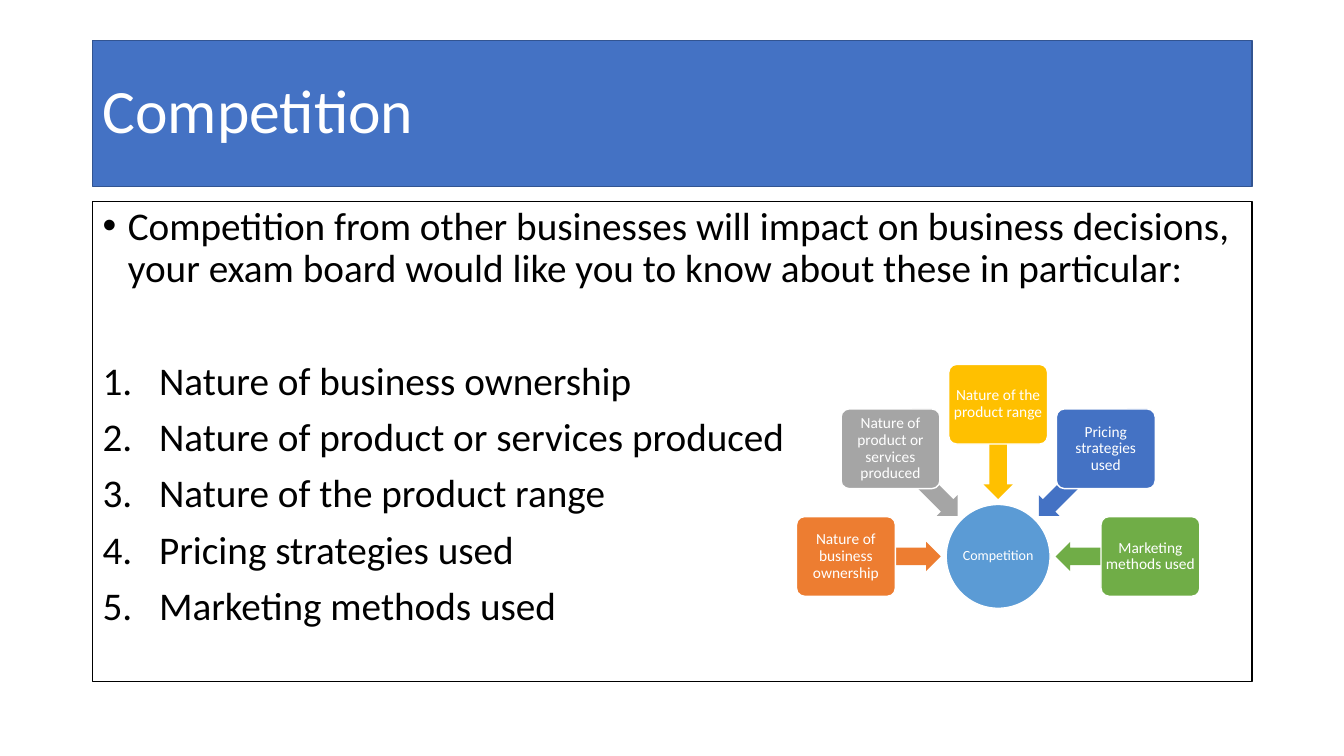
from dataclasses import dataclass
from math import cos, radians, sin

from lxml import etree
from pptx import Presentation
from pptx.dml.color import RGBColor
from pptx.enum.shapes import MSO_SHAPE
from pptx.enum.text import MSO_ANCHOR, PP_ALIGN
from pptx.oxml.ns import qn
from pptx.util import Pt

RECT, ROUND = MSO_SHAPE.RECTANGLE, MSO_SHAPE.ROUNDED_RECTANGLE
OVAL, ARROW = MSO_SHAPE.OVAL, MSO_SHAPE.LEFT_ARROW
TOP, MIDDLE = MSO_ANCHOR.TOP, MSO_ANCHOR.MIDDLE
LEFT, CENTER = PP_ALIGN.LEFT, PP_ALIGN.CENTER

# Content: each factor is a numbered line and a box around the hub
TITLE = "Competition"
INTRO = ("Competition from other businesses will impact on business decisions, "
         "your exam board would like you to know about these in particular:")
FACTORS = [
    ("Nature of business ownership", "ED7D31"),
    ("Nature of product or services produced", "A5A5A5"),
    ("Nature of the product range", "FFC000"),
    ("Pricing strategies used", "4472C4"),
    ("Marketing methods used", "70AD47"),
]


@dataclass(frozen=True)
class Theme:
    font: str = "Calibri"
    black: str = "000000"
    white: str = "FFFFFF"
    banner: str = "4472C4"
    banner_line: str = "325491"
    hub: str = "5B9BD5"
    title_pt: int = 44
    body_pt: int = 28
    hub_pt: int = 10
    box_pt: int = 11


THEME = Theme()

# Layout in px, 100 to the inch
PX = 9144
SLIDE_W, SLIDE_H = 1333, 750
MARGIN, CONTENT_W = 92, 1150
TITLE_Y, TITLE_H = 40, 145
BODY_Y, BODY_H = 200, 476
HUB_X, HUB_Y, HUB_D = 990, 552, 103
BOX_W, BOX_H, BOX_RADIUS = 98, 79, 151
ARROW_W, ARROW_H, ARROW_RADIUS = 94, 29, 104
FIRST_ANGLE, ANGLE_STEP = 180, 45


def px(n):
    return round(n * PX)


def add_shape(s, kind, x, y, w, h, fill, line=None):
    sp = s.shapes.add_shape(kind, px(x), px(y), px(w), px(h))
    sp.shadow.inherit = False
    sp.fill.solid()
    sp.fill.fore_color.rgb = RGBColor.from_string(fill)
    if line:
        sp.line.color.rgb = RGBColor.from_string(line)
        sp.line.width = Pt(1)
    else:
        sp.line.fill.background()
    return sp


def set_frame(sp, anchor, inset=None):
    tf = sp.text_frame
    tf.word_wrap = True
    tf.vertical_anchor = anchor
    if inset is not None:
        tf.margin_left = tf.margin_right = px(inset)
        tf.margin_top = tf.margin_bottom = px(inset)
    return tf


def write(p, text, size, color, align=LEFT, before=0):
    p.alignment = align
    p.line_spacing = 0.9
    p.space_before = Pt(before)
    r = p.add_run()
    r.text = text
    r.font.name = THEME.font
    r.font.size = Pt(size)
    r.font.color.rgb = RGBColor.from_string(color)


def add_bullet(p, indent, tag, **attrs):
    pPr = p._p.get_or_add_pPr()
    pPr.set("marL", str(px(indent)))
    pPr.set("indent", str(-px(indent)))
    etree.SubElement(pPr, qn("a:buFont"), typeface="Arial" if tag == "a:buChar" else THEME.font)
    etree.SubElement(pPr, qn(tag), **attrs)


def on_ring(angle, radius, w, h):
    """Top left corner of a w by h part centred on a ring around the hub."""
    a = radians(angle)
    return HUB_X + radius * cos(a) - w / 2, HUB_Y + radius * sin(a) - h / 2


prs = Presentation()
prs.slide_width, prs.slide_height = px(SLIDE_W), px(SLIDE_H)
s = prs.slides.add_slide(prs.slide_layouts[6])

# Title banner
banner = add_shape(s, RECT, MARGIN, TITLE_Y, CONTENT_W, TITLE_H, THEME.banner, THEME.banner_line)
write(set_frame(banner, MIDDLE).paragraphs[0], TITLE, THEME.title_pt, THEME.white)

# Body: introduction and numbered list
body = add_shape(s, RECT, MARGIN, BODY_Y, CONTENT_W, BODY_H, THEME.white, THEME.black)
tf = set_frame(body, TOP)
p = tf.paragraphs[0]
write(p, INTRO, THEME.body_pt, THEME.black)
add_bullet(p, 25, "a:buChar", char="•")
for i, (factor, _) in enumerate(FACTORS):
    p = tf.add_paragraph()
    write(p, factor, THEME.body_pt, THEME.black, before=10 if i else 50)
    add_bullet(p, 56, "a:buAutoNum", type="arabicPeriod")

# Hub of the diagram
hub = add_shape(s, OVAL, HUB_X - HUB_D / 2, HUB_Y - HUB_D / 2, HUB_D, HUB_D,
                THEME.hub, THEME.white)
write(set_frame(hub, MIDDLE, 1).paragraphs[0], TITLE, THEME.hub_pt, THEME.white, CENTER)

# Arrows and boxes, clockwise from the left
for i, (factor, color) in enumerate(FACTORS):
    angle = FIRST_ANGLE + i * ANGLE_STEP
    arrow = add_shape(s, ARROW, *on_ring(angle, ARROW_RADIUS, ARROW_W, ARROW_H),
                      ARROW_W, ARROW_H, color)
    arrow.adjustments[0] = 0.6
    arrow.adjustments[1] = 0.5
    arrow.rotation = angle % 360
    box = add_shape(s, ROUND, *on_ring(angle, BOX_RADIUS, BOX_W, BOX_H),
                    BOX_W, BOX_H, color, THEME.white)
    box.adjustments[0] = 0.1
    write(set_frame(box, MIDDLE, 2).paragraphs[0], factor, THEME.box_pt, THEME.white, CENTER)

prs.save("out.pptx")
